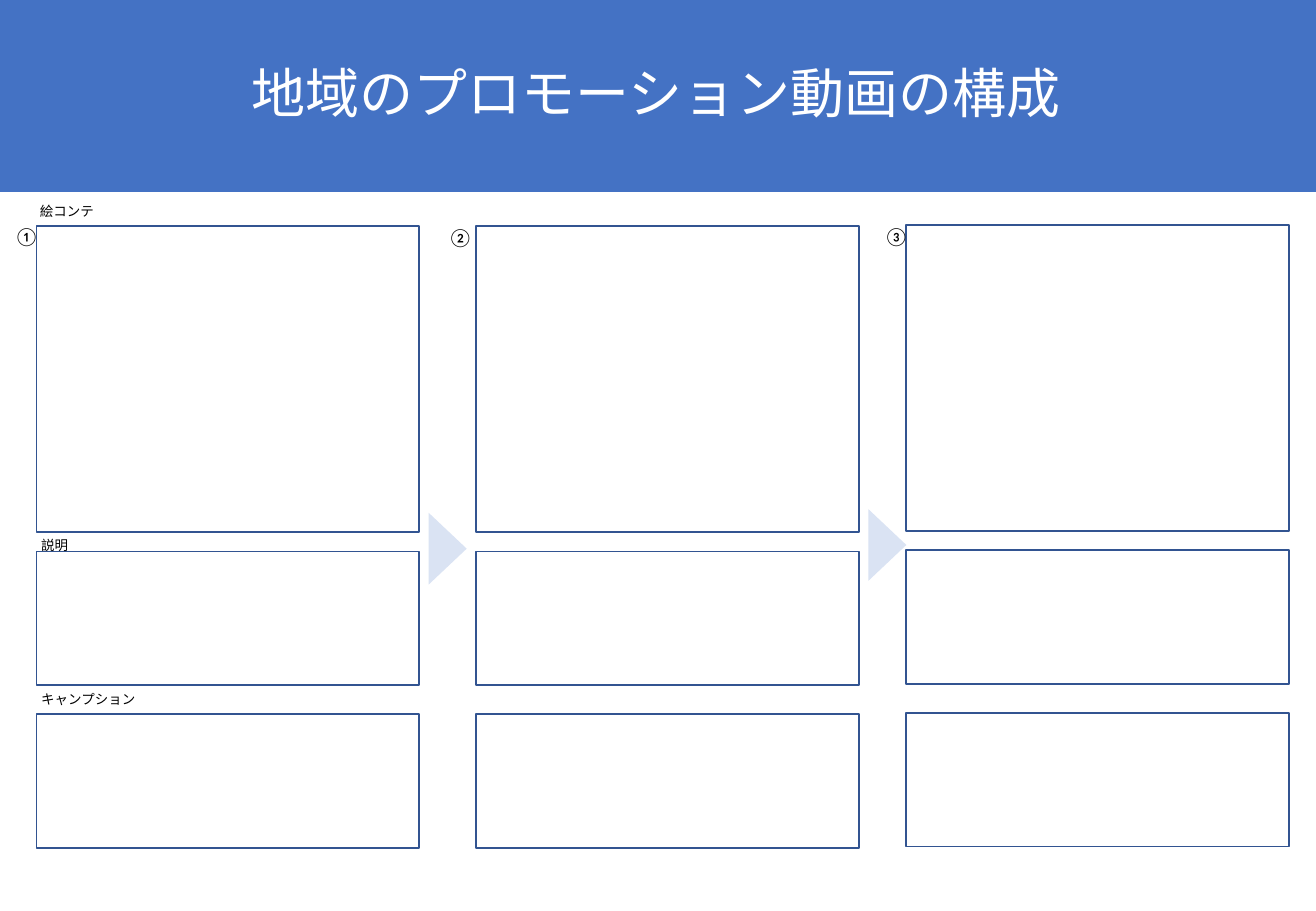
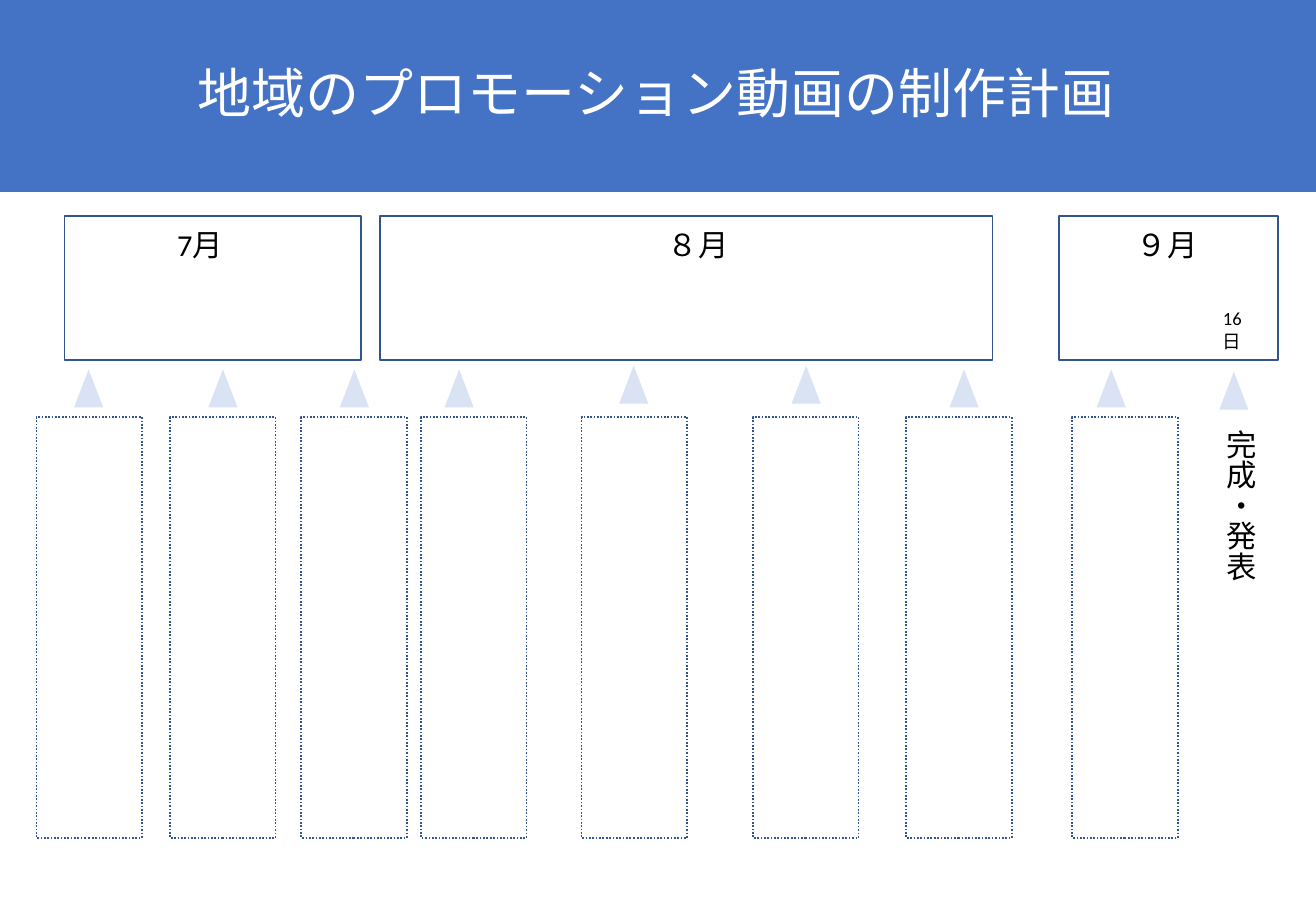
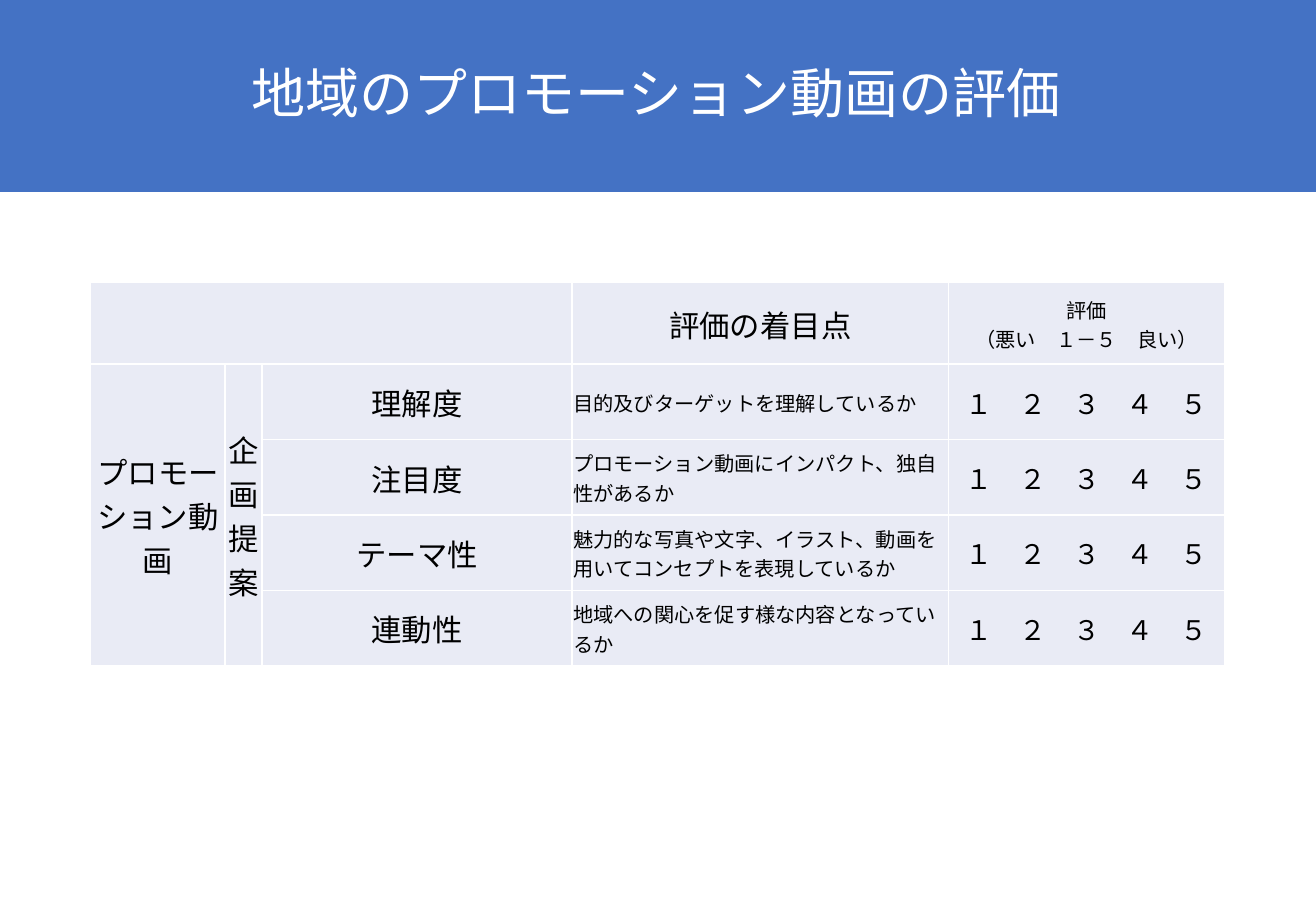
import pptx
import pptx.dml.color
import pptx.enum.dml
import pptx.enum.shapes
import pptx.enum.text
import pptx.oxml.ns
import pptx.util
from lxml import etree

Pt = pptx.util.Pt
SHAPE = pptx.enum.shapes.MSO_SHAPE
ALIGN = pptx.enum.text.PP_ALIGN
ANCHOR = pptx.enum.text.MSO_ANCHOR
qn = pptx.oxml.ns.qn

COLORS = {"band": "4472C4", "outline": "325491", "arrow": "DAE3F3",
          "cell": "E9EBF5", "white": "FFFFFF", "black": "000000"}
JAPANESE, LATIN = "Noto Sans CJK JP", "Calibri"
PAGE_WIDTH, PAGE_HEIGHT = 780, 540


def color(name):
    return pptx.dml.color.RGBColor.from_string(COLORS[name])


def paint(target, name):
    target.fill.solid()
    target.fill.fore_color.rgb = color(name)


def write(frame, lines, size, font=JAPANESE, ink="black", align=ALIGN.LEFT):
    """Fill a text frame with one paragraph for each line."""
    for index, line in enumerate(lines):
        para = frame.paragraphs[0] if index == 0 else frame.add_paragraph()
        para.alignment = align
        span = para.add_run()
        span.text = line
        span.font.size = Pt(size)
        span.font.color.rgb = color(ink)
        span.font.name = font
        etree.SubElement(span.font._element, qn("a:ea"), typeface=JAPANESE)


def add_label(page, box, lines, size, font=JAPANESE, vertical=False):
    label = page.shapes.add_textbox(*map(Pt, box))
    frame = label.text_frame
    frame.word_wrap = True
    write(frame, lines, size, font)
    if vertical:
        label.element.find(".//" + qn("a:bodyPr")).set("vert", "eaVert")


def add_frame(shapes, box, dotted=False):
    """Draw an empty outlined box."""
    frame = shapes.add_shape(SHAPE.RECTANGLE, *map(Pt, box))
    frame.shadow.inherit = False
    frame.fill.background()
    frame.line.color.rgb = color("outline")
    frame.line.width = Pt(1)
    if dotted:
        frame.line.dash_style = pptx.enum.dml.MSO_LINE.ROUND_DOT


def add_arrow(shapes, box, rotation=0):
    arrow = shapes.add_shape(SHAPE.ISOSCELES_TRIANGLE, *map(Pt, box))
    arrow.shadow.inherit = False
    arrow.rotation = rotation
    paint(arrow, "arrow")
    arrow.line.fill.background()


def add_page(deck, heading):
    """Add a slide with the title in a full-width band."""
    page = deck.slides.add_slide(deck.slide_layouts[5])
    title = page.shapes.title
    title.left, title.top, title.width, title.height = map(
        Pt, (-1.5, 0, PAGE_WIDTH + 1.5, 113.8))
    paint(title, "band")
    frame = title.text_frame
    frame.auto_size = pptx.enum.text.MSO_AUTO_SIZE.NONE
    frame.vertical_anchor = ANCHOR.MIDDLE
    write(frame, [heading], 32, ink="white", align=ALIGN.CENTER)
    frame.paragraphs[0].line_spacing = 0.9
    return page


def add_scene(shapes, left, top):
    """Stack the sketch, description and caption boxes of one scene."""
    for offset, height in ((0, 181.4), (193, 79.2), (289.5, 79.2)):
        add_frame(shapes, (left, top + offset, 226.8, height))


def build_storyboard(deck):
    page = add_page(deck, "地域のプロモーション動画の構成")
    board = page.shapes.add_group_shape().shapes
    for left, top in ((21.6, 133.9), (282.2, 133.9), (537.1, 133.2)):
        add_scene(board, left, top)
    for left, top in ((244.1, 314), (504.7, 311.8)):
        add_arrow(board, (left, top, 42.5, 22.5), rotation=90)
    for text, left, top in (("絵コンテ", 16.5, 116.6), ("説明", 17.3, 314.6),
                            ("キャンプション", 17.3, 406.1)):
        add_label(page, (left, top, 95, 17.3), [text], 8)
    for text, left, top in (("①", 1.4, 129.6), ("②", 258.5, 130.5),
                            ("③", 517, 129.9)):
        add_label(page, (left, top, 28, 20.9), [text], 11, LATIN)


def add_month(page, name, left, width, label_left):
    add_frame(page.shapes, (left, 128.2, width, 85))
    add_label(page, (label_left, 130.3, 51.1, 28.8), [name], 18, LATIN)


def add_task(page, left, arrow_left, arrow_top):
    add_frame(page.shapes, (left, 247.3, 62.6, 249.3), dotted=True)
    add_arrow(page.shapes, (arrow_left, arrow_top, 17.3, 22.5))


def build_schedule(deck):
    page = add_page(deck, "地域のプロモーション動画の制作計画")
    for month in (("7月", 38.2, 175.7, 97.9), ("８月", 225.4, 362.9, 388.8),
                  ("９月", 627.8, 129.6, 666.7)):
        add_month(page, *month)
    high, low = 216.8, 219
    for task in ((21.6, 43.9, low), (100.8, 123.5, low), (178.6, 201.4, low),
                 (249.5, 263.5, low), (344.7, 367, high), (446.4, 469.2, high),
                 (537.1, 562.8, low), (635.6, 650, low)):
        add_task(page, *task)
    add_label(page, (717.8, 178.6, 41, 33.8), ["16", "日"], 11, LATIN)
    add_label(page, (713.5, 247.7, 36, 130.3), ["完成・発表"], 18, LATIN,
              vertical=True)
    add_arrow(page.shapes, (722.7, 220.4, 17.3, 22.5))


def style_cell(cell):
    """Give a cell its fill, narrow margins and white borders."""
    paint(cell, "cell")
    cell.vertical_anchor = ANCHOR.MIDDLE
    cell.margin_left = cell.margin_right = cell.margin_top = Pt(0.72)
    cell.margin_bottom = Pt(0)
    properties = cell._tc.get_or_add_tcPr()
    for index, side in enumerate(("lnL", "lnR", "lnT", "lnB")):
        border = etree.Element(qn("a:" + side), w=str(Pt(1)))
        fill = etree.SubElement(border, qn("a:solidFill"))
        etree.SubElement(fill, qn("a:srgbClr"), val=COLORS["white"])
        properties.insert(index, border)


def add_rating_table(page, left, top, criteria):
    widths = (79.9, 21.8, 183.8, 223.1, 164)
    heights = [48.4] + [44.7] * len(criteria)
    table = page.shapes.add_table(
        len(heights), len(widths), Pt(left), Pt(top),
        Pt(sum(widths)), Pt(sum(heights))).table
    table.first_row = table.horz_banding = False
    for column, width in zip(table.columns, widths):
        column.width = Pt(width)
    for row, height in zip(table.rows, heights):
        row.height = Pt(height)
    for cell in table.iter_cells():
        style_cell(cell)

    def put(row, column, lines, size, align=ALIGN.CENTER):
        write(table.cell(row, column).text_frame, lines, size, align=align)

    table.cell(0, 0).merge(table.cell(0, 2))
    put(0, 3, ["評価の着目点"], 18)
    put(0, 4, ["評価", "（悪い　１－５　良い）"], 12)
    for column, text in enumerate(("プロモーション動画", "企画提案")):
        cell = table.cell(1, column)
        cell.merge(table.cell(len(criteria), column))
        cell._tc.get_or_add_tcPr().set("vert", "eaVert")
        put(1, column, [text], 18)
    for row, (name, question) in enumerate(criteria, 1):
        put(row, 2, [name], 18)
        put(row, 3, [question], 12, ALIGN.LEFT)
        put(row, 4, ["１　２　３　４　５"], 16)


def build_evaluation(deck):
    page = add_page(deck, "地域のプロモーション動画の評価")
    add_rating_table(page, 53.6, 167.5, (
        ("理解度", "目的及びターゲットを理解しているか"),
        ("注目度", "プロモーション動画にインパクト、独自性があるか"),
        ("テーマ性", "魅力的な写真や文字、イラスト、動画を用いてコンセプトを表現しているか"),
        ("連動性", "地域への関心を促す様な内容となっているか"),
    ))


def main():
    deck = pptx.Presentation()
    deck.slide_width, deck.slide_height = Pt(PAGE_WIDTH), Pt(PAGE_HEIGHT)
    build_storyboard(deck)
    build_schedule(deck)
    build_evaluation(deck)
    deck.save("out.pptx")


if __name__ == "__main__":
    main()
